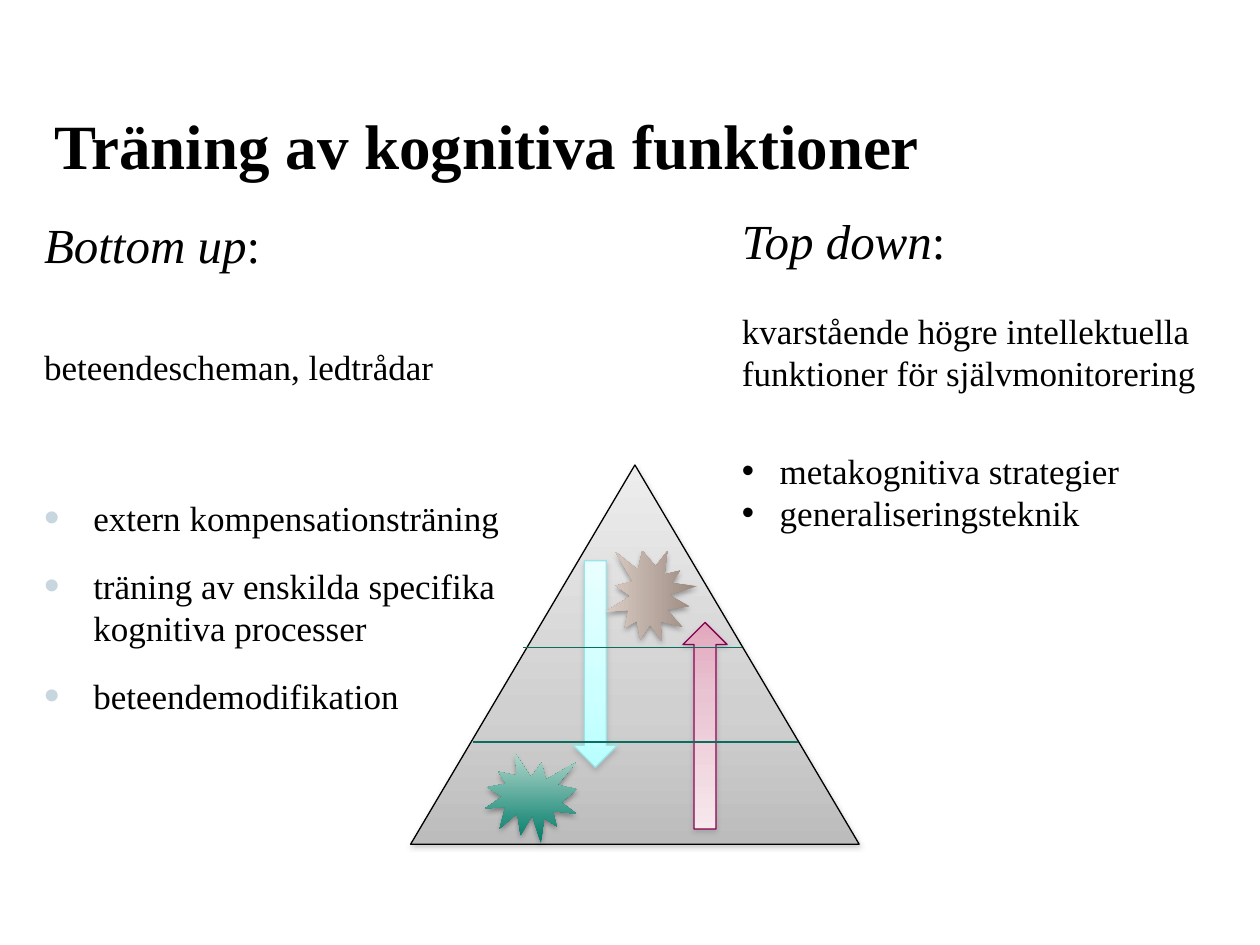
from lxml.etree import SubElement, fromstring
from pptx import Presentation
from pptx.dml.color import RGBColor
from pptx.enum.shapes import MSO_CONNECTOR, MSO_SHAPE
from pptx.enum.text import MSO_ANCHOR, MSO_AUTO_SIZE, PP_ALIGN
from pptx.oxml.ns import nsdecls, qn
from pptx.util import Inches, Pt

THEME = {
    "font": "Times New Roman", "ink": "000000", "rule": "0B6D5E",
    "title": 36, "head": 28, "text": 20, "line": 0.75,
}

TITLE = "Träning av kognitiva funktioner"

# Each line: text, kind, space before in points
LEFT = [
    ("Bottom up:", "head", 0),
    ("beteendescheman, ledtrådar", "text", 41.5),
    ("extern kompensationsträning", "bullet", 62),
    ("träning av enskilda specifika kognitiva processer", "bullet", 15),
    ("beteendemodifikation", "bullet", 15),
]
RIGHT = [
    ("Top down:", "head", 0),
    ("kvarstående högre intellektuella funktioner för självmonitorering", "text", 23),
    ("metakognitiva strategier", "bullet", 32),
    ("generaliseringsteknik", "bullet", 0),
]

SOFT = ("808080", 38, 1.6)
DEEP = ("000000", 35, 1.8)
ARROW, SEAL = MSO_SHAPE.DOWN_ARROW, MSO_SHAPE.EXPLOSION1

# Each shape: preset, box, turn, gradient stops, gradient angle, line, shadow
PYRAMID = [
    (MSO_SHAPE.ISOSCELES_TRIANGLE, (3.26, 3.69, 3.56, 3.01), 0,
     [(0, "EDEDED"), (65, "D0D0D0"), (100, "BCBCBC")], 90, "000000", SOFT),
    (ARROW, (4.55, 4.45, 0.35, 1.64), 0,
     [(0, "E9FFFF"), (65, "CCFFFF"), (100, "B8FFFF")], 90, "9AE3E6", SOFT),
    (ARROW, (5.42, 4.94, 0.35, 1.64), 180,
     [(0, "F7E8ED"), (65, "E9C3D1"), (100, "E2A8BD")], 90, "870051", SOFT),
]
LEVELS = [(5.89, 4.15, 5.14), (6.33, 3.75, 5.89)]
SEALS = [
    (SEAL, (4.81, 4.37, 0.72, 0.72), 270,
     [(0, "9A897F"), (100, "DBCDC5")], 270, None, DEEP),
    (SEAL, (3.85, 5.98, 0.73, 0.71), 0,
     [(0, "007B68"), (100, "AFD6CB")], 270, None, DEEP),
]


def color(code):
    return RGBColor.from_string(code)


def place(shape, box):
    shape.left, shape.top, shape.width, shape.height = map(Inches, box)


def style(run, size, bold=False, italic=False):
    font = run.font
    font.name, font.size = THEME["font"], Pt(size)
    font.bold, font.italic = bold, italic
    font.color.rgb = color(THEME["ink"])


def frame_of(shape, inset=None):
    frame = shape.text_frame
    frame.word_wrap = True
    frame.auto_size = MSO_AUTO_SIZE.NONE
    frame.vertical_anchor = MSO_ANCHOR.TOP
    if inset is not None:
        frame.margin_left = frame.margin_right = inset
        frame.margin_top = frame.margin_bottom = inset
    return frame


def mark(para, kind, indent, tint, scale):
    """Set indent and bullet of a paragraph."""
    prop = para._p.get_or_add_pPr()
    if kind != "bullet":
        prop.set("marL", "0")
        prop.set("indent", "0")
        SubElement(prop, qn("a:buNone"))
        return
    prop.set("marL", str(Inches(indent)))
    prop.set("indent", str(-Inches(indent)))
    SubElement(SubElement(prop, qn("a:buClr")), qn("a:srgbClr"), val=tint)
    SubElement(prop, qn("a:buSzPct"), val=str(scale * 1000))
    SubElement(prop, qn("a:buFont"), typeface="Arial")
    SubElement(prop, qn("a:buChar"), char="•")


def write(frame, lines, indent, tint, scale):
    for i, (text, kind, gap) in enumerate(lines):
        para = frame.paragraphs[0] if i == 0 else frame.add_paragraph()
        mark(para, kind, indent, tint, scale)
        para.alignment = PP_ALIGN.LEFT
        para.space_before = Pt(gap)
        if kind == "head":
            for part, lean in ((text[:-1], True), (text[-1], False)):
                run = para.add_run()
                run.text = part
                style(run, THEME["head"], italic=lean)
        else:
            para.text = text
            style(para.runs[0], THEME["text"])


def draw(slide, kind, box, turn, stops, angle, line, shadow):
    shape = slide.shapes.add_shape(kind, *map(Inches, box))
    shape.rotation = turn
    if line:
        shape.line.color.rgb = color(line)
        shape.line.width = Pt(THEME["line"])
    else:
        shape.line.fill.background()
    prop = shape._element.spPr
    prop.find(qn("a:xfrm")).set("flipH", "1")
    marks = "".join(
        f'<a:gs pos="{pos * 1000}"><a:srgbClr val="{code}"/></a:gs>'
        for pos, code in stops)
    prop.insert(2, fromstring(
        f'<a:gradFill {nsdecls("a")} rotWithShape="1"><a:gsLst>{marks}</a:gsLst>'
        f'<a:lin ang="{angle * 60000}" scaled="0"/></a:gradFill>'))
    tint, alpha, dist = shadow
    prop.append(fromstring(
        f'<a:effectLst {nsdecls("a")}><a:outerShdw blurRad="{Pt(3.1)}" '
        f'dist="{Pt(dist)}" dir="5400000" rotWithShape="0"><a:srgbClr val="{tint}">'
        f'<a:alpha val="{alpha * 1000}"/></a:srgbClr></a:outerShdw></a:effectLst>'))


def rule(slide, start, end, y):
    line = slide.shapes.add_connector(
        MSO_CONNECTOR.STRAIGHT, Inches(start), Inches(y), Inches(end), Inches(y))
    line.line.color.rgb = color(THEME["rule"])
    line.line.width = Pt(THEME["line"])
    SubElement(line._element.spPr, qn("a:effectLst"))


def main():
    deck = Presentation()
    deck.slide_width, deck.slide_height = Inches(10), Inches(7.5)
    slide = deck.slides.add_slide(deck.slide_layouts[1])

    title, body = slide.shapes.title, slide.placeholders[1]
    place(title, (0.43, 0.91, 8.98, 0.87))
    frame = frame_of(title, 0)
    frame.text = TITLE
    para = frame.paragraphs[0]
    para.alignment, para.line_spacing = PP_ALIGN.LEFT, 0.9
    style(para.runs[0], THEME["title"], bold=True)

    place(body, (0.35, 1.7, 3.79, 4.41))
    write(frame_of(body, 0), LEFT, 0.39, "C8D6DF", 126)
    side = slide.shapes.add_textbox(*map(Inches, (5.79, 1.62, 3.94, 3.67)))
    write(frame_of(side), RIGHT, 0.3, THEME["ink"], 100)

    for item in PYRAMID:
        draw(slide, *item)
    for level in LEVELS:
        rule(slide, *level)
    for item in SEALS:
        draw(slide, *item)
    deck.save("out.pptx")


if __name__ == "__main__":
    main()
